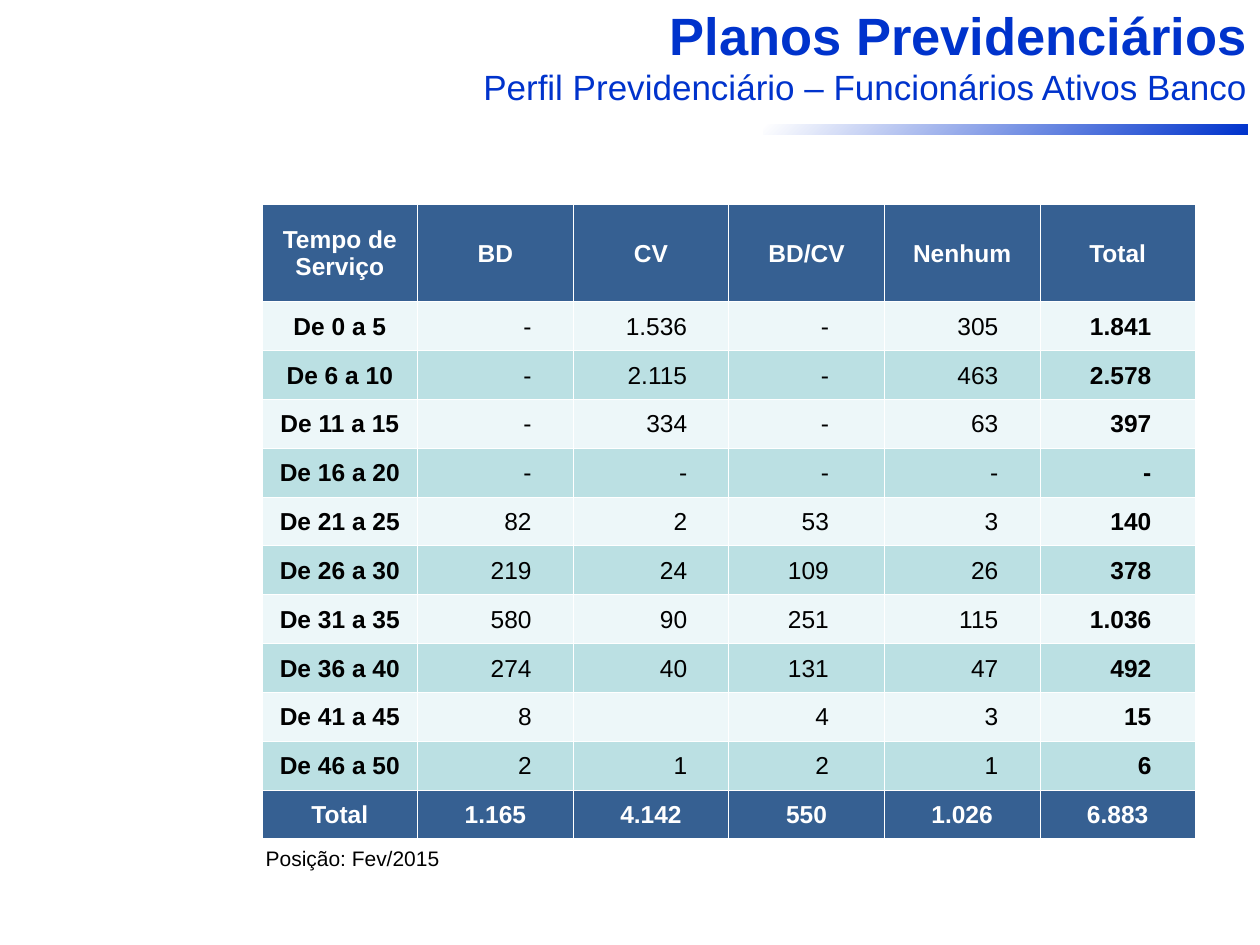
from typing import NamedTuple

from lxml import etree
from pptx import Presentation
from pptx.dml.color import RGBColor
from pptx.enum.shapes import MSO_SHAPE
from pptx.enum.text import MSO_ANCHOR, MSO_AUTO_SIZE, PP_ALIGN
from pptx.oxml.ns import qn
from pptx.util import Inches, Pt

LEFT, CENTER, RIGHT = PP_ALIGN.LEFT, PP_ALIGN.CENTER, PP_ALIGN.RIGHT
TOP, MIDDLE = MSO_ANCHOR.TOP, MSO_ANCHOR.MIDDLE
FIT_SHAPE = MSO_AUTO_SIZE.SHAPE_TO_FIT_TEXT
RECTANGLE = MSO_SHAPE.RECTANGLE

WHITE = RGBColor(0xFF, 0xFF, 0xFF)
BLACK = RGBColor(0x00, 0x00, 0x00)
BLUE = RGBColor(0x00, 0x33, 0xCC)
NAVY = RGBColor(0x36, 0x60, 0x92)
PALE = RGBColor(0xED, 0xF7, 0xF9)
TEAL = RGBColor(0xBB, 0xE0, 0xE3)

FONT = "Arial"
TITLE_ONLY = 5
CELL_INSET = 0.01
TABLE_HEIGHT = 5.04


class Column(NamedTuple):
    heading: str
    number_inset: float = 0.33


class ServiceBand(NamedTuple):
    label: str
    values: tuple[str, ...]


COLUMNS = [
    Column("Tempo de Serviço"),
    Column("BD"),
    Column("CV"),
    Column("BD/CV", 0.44),
    Column("Nenhum"),
    Column("Total", 0.35),
]

BANDS = [
    ServiceBand("De 0 a 5", ("-", "1.536", "-", "305", "1.841")),
    ServiceBand("De 6 a 10", ("-", "2.115", "-", "463", "2.578")),
    ServiceBand("De 11 a 15", ("-", "334", "-", "63", "397")),
    ServiceBand("De 16 a 20", ("-", "-", "-", "-", "-")),
    ServiceBand("De 21 a 25", ("82", "2", "53", "3", "140")),
    ServiceBand("De 26 a 30", ("219", "24", "109", "26", "378")),
    ServiceBand("De 31 a 35", ("580", "90", "251", "115", "1.036")),
    ServiceBand("De 36 a 40", ("274", "40", "131", "47", "492")),
    ServiceBand("De 41 a 45", ("8", "", "4", "3", "15")),
    ServiceBand("De 46 a 50", ("2", "1", "2", "1", "6")),
]
TOTALS = ServiceBand("Total", ("1.165", "4.142", "550", "1.026", "6.883"))


def write(para, text: str, *, size: float, color: RGBColor,
          bold: bool = False, align=LEFT) -> None:
    para.alignment = align
    span = para.add_run()
    span.text = text
    span.font.name = FONT
    span.font.size = Pt(size)
    span.font.bold = bold
    span.font.color.rgb = color


def place(shape, left: float, top: float, width: float, height: float) -> None:
    shape.left, shape.top = Inches(left), Inches(top)
    shape.width, shape.height = Inches(width), Inches(height)


def add_title(page) -> None:
    title = page.shapes.title
    place(title, 3.27, -0.03, 6.73, 0.94)
    frame = title.text_frame
    frame.word_wrap = True
    frame.auto_size = FIT_SHAPE
    frame.vertical_anchor = TOP
    write(frame.paragraphs[0], "Planos Previdenciários",
          size=30, color=BLUE, bold=True, align=RIGHT)
    write(frame.add_paragraph(), "Perfil Previdenciário – Funcionários Ativos Banco",
          size=20, color=BLUE, align=RIGHT)


def add_title_rule(page) -> None:
    rule = page.shapes.add_shape(
        RECTANGLE, Inches(6.06), Inches(0.99), Inches(3.84), Inches(0.08))
    rule.shadow.inherit = False
    rule.line.fill.background()
    rule.fill.gradient()
    rule.fill.gradient_angle = 315
    for stop, color in zip(rule.fill.gradient_stops, (WHITE, BLUE)):
        stop.color.rgb = color


def add_borders(cell) -> None:
    properties = cell._tc.get_or_add_tcPr()
    for side in ("a:lnL", "a:lnR", "a:lnT", "a:lnB"):
        line = etree.SubElement(properties, qn(side), w=str(Pt(0.5)))
        fill = etree.SubElement(line, qn("a:solidFill"))
        etree.SubElement(fill, qn("a:srgbClr"), val=str(WHITE))


def fill_cell(cell, text: str, *, fill: RGBColor, color: RGBColor, bold: bool,
              align=CENTER, right_inset: float = CELL_INSET) -> None:
    add_borders(cell)
    cell.fill.solid()
    cell.fill.fore_color.rgb = fill
    cell.vertical_anchor = MIDDLE
    cell.margin_left = cell.margin_top = Inches(CELL_INSET)
    cell.margin_right = Inches(right_inset)
    cell.margin_bottom = 0
    if text:
        write(cell.text_frame.paragraphs[0], text,
              size=14, color=color, bold=bold, align=align)


def add_service_table(page) -> None:
    last_row, last_column = len(BANDS) + 1, len(COLUMNS) - 1
    table = page.shapes.add_table(
        last_row + 1, len(COLUMNS),
        Inches(2.08), Inches(1.62), Inches(7.41), Inches(TABLE_HEIGHT)).table
    # The heading row is twice as tall as the others.
    row_height = TABLE_HEIGHT / (last_row + 2)
    for row in table.rows:
        row.height = Inches(row_height)
    table.rows[0].height = Inches(2 * row_height)

    for index, column in enumerate(COLUMNS):
        fill_cell(table.cell(0, index), column.heading,
                  fill=NAVY, color=WHITE, bold=True)
    for index, text in enumerate((TOTALS.label, *TOTALS.values)):
        fill_cell(table.cell(last_row, index), text,
                  fill=NAVY, color=WHITE, bold=True)

    for row_index, band in enumerate(BANDS, start=1):
        fill = PALE if row_index % 2 else TEAL
        fill_cell(table.cell(row_index, 0), band.label,
                  fill=fill, color=BLACK, bold=True)
        for index, text in enumerate(band.values, start=1):
            fill_cell(table.cell(row_index, index), text, fill=fill, color=BLACK,
                      bold=index == last_column, align=RIGHT,
                      right_inset=COLUMNS[index].number_inset)


def add_date_note(page) -> None:
    box = page.shapes.add_textbox(
        Inches(2.01), Inches(6.66), Inches(6.61), Inches(0.3))
    frame = box.text_frame
    frame.word_wrap = True
    frame.auto_size = FIT_SHAPE
    write(frame.paragraphs[0], "Posição: Fev/2015", size=12, color=BLACK)


def main() -> None:
    deck = Presentation()
    deck.slide_width, deck.slide_height = Inches(10), Inches(7.5)
    page = deck.slides.add_slide(deck.slide_layouts[TITLE_ONLY])
    add_title_rule(page)
    add_title(page)
    add_date_note(page)
    add_service_table(page)
    deck.save("out.pptx")


if __name__ == "__main__":
    main()
